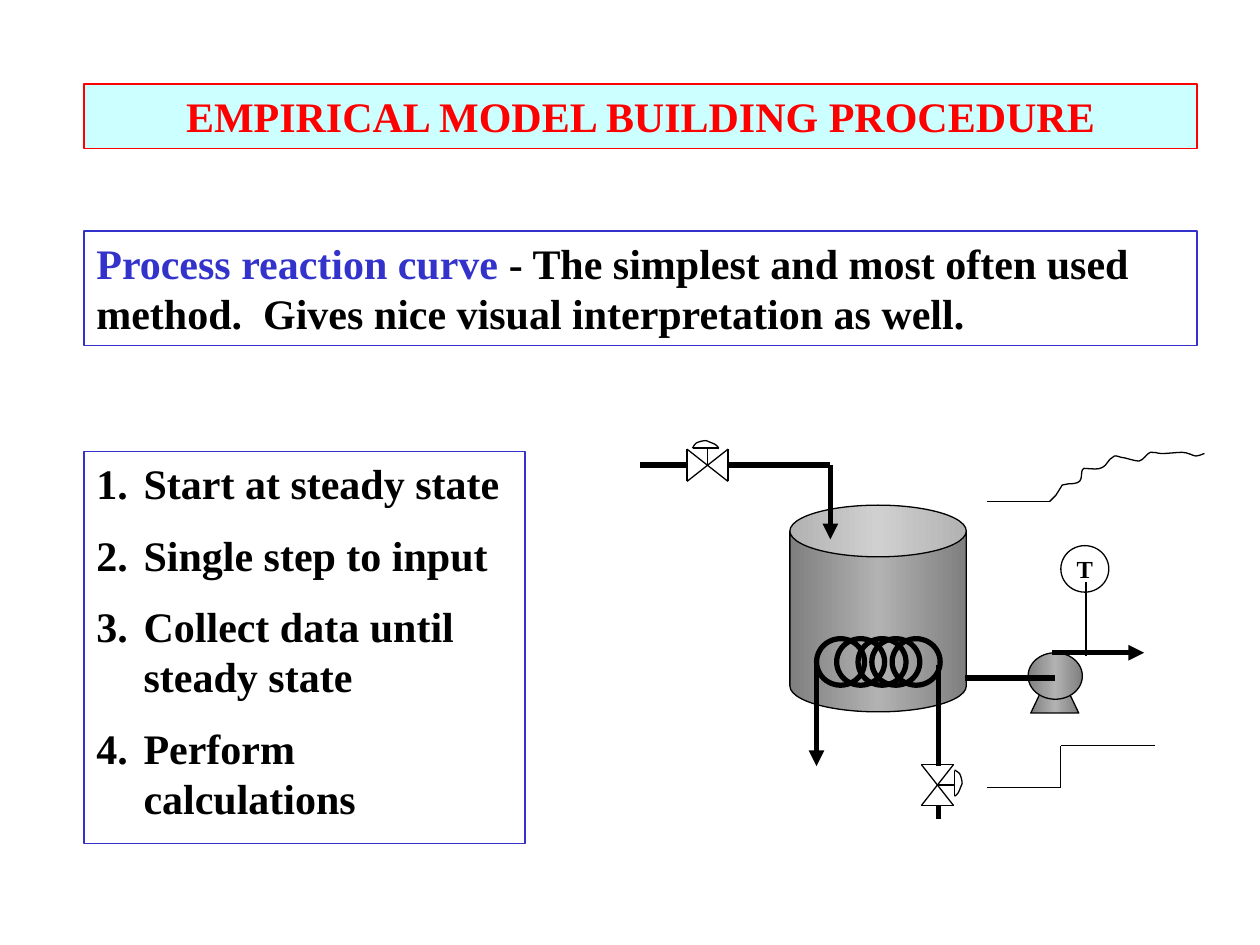
import copy

import pptx
import pptx.dml.color
import pptx.enum.shapes
import pptx.enum.text
import pptx.oxml
import pptx.oxml.ns
import pptx.util

Pt = pptx.util.Pt
SHAPES = pptx.enum.shapes.MSO_SHAPE
ALIGN = pptx.enum.text.PP_ALIGN
FONT = "Times New Roman"
BLACK, RED, BLUE, CYAN = "000000", "FF0000", "3333CC", "CCFFFF"
METAL = [(0, "7F7F7F"), (50, "B2B2B2"), (100, "7F7F7F")]
THIN, THICK = 0.75, 3

STEPS = ["Start at steady state", "Single step to input",
         "Collect data until steady state", "Perform calculations"]

# Curves: a start point, then two control points and an end point per segment
VALVE_CAP = [(6.4, 0), (5.8, 0.7), (5.8, 1.4), (4.3, 2.2), (2.9, 2.9), (0.7, 3.6), (-0.7, 4.3),
             (-2.9, 4.3), (-5, 3.6), (-6.5, 2.9), (-7.2, 2.2), (-7.9, 1.4), (-8.6, 0)]
RESPONSE = [(239.8, 34.6), (241.2, 33.1), (241.9, 32.4), (243.4, 31),
            (244.8, 28.8), (246.2, 26.6), (247, 25.2), (248.4, 24.5), (249.1, 25.2), (250.6, 24.5),
            (252, 24.5), (255.6, 24.5), (257, 23), (258.5, 21.6), (257.8, 17.3), (258.5, 16.6),
            (259.2, 15.1), (259.2, 15.8), (261.4, 15.8), (263.5, 15.8), (267.8, 16.6), (270, 15.1),
            (272.2, 14.4), (273.6, 10.1), (275.8, 9.4), (277.2, 7.9), (277.9, 8.6), (280.8, 9.4),
            (283, 9.4), (288, 11.5), (290.9, 11.5), (293.8, 10.8), (295.2, 7.2), (297.4, 6.5),
            (299.5, 5.8), (301, 7.2), (303.8, 7.2), (307.4, 7.2), (312.5, 6.5), (315.4, 6.5),
            (319, 6.5), (321.8, 8.6), (323.3, 8.6), (325.4, 8.6), (327.6, 7.2), (328.3, 7.2)]


def color(value):
    return pptx.dml.color.RGBColor.from_string(value)


def style(shape, fill=None, line=BLACK, width=THIN):
    """Fill with nothing, one colour, or a list of gradient stops."""
    shape.shadow.inherit = False
    shape.line.color.rgb = color(line)
    shape.line.width = Pt(width)
    if fill is None:
        shape.fill.background()
    elif isinstance(fill, str):
        shape.fill.solid()
        shape.fill.fore_color.rgb = color(fill)
    else:
        shape.fill.gradient()
        shape.fill.gradient_angle = 0
        stops = shape.element.spPr.find(".//" + pptx.oxml.ns.qn("a:gsLst"))
        stops.append(copy.deepcopy(stops[0]))
        for stop, (position, value) in zip(shape.fill.gradient_stops, fill):
            stop.position = position / 100
            stop.color.rgb = color(value)


def add_shape(shapes, kind, box, **look):
    shape = shapes.add_shape(kind, *map(Pt, box))
    style(shape, **look)
    return shape


def add_line(shapes, start, end, width=THIN, arrow=False):
    line = shapes.add_connector(pptx.enum.shapes.MSO_CONNECTOR.STRAIGHT,
                                *map(Pt, (*start, *end)))
    line.line.color.rgb = color(BLACK)
    line.line.width = Pt(width)
    if arrow:
        pptx.oxml.ns.qn("a:tailEnd")
        head = line.line._get_or_add_ln().makeelement(
            pptx.oxml.ns.qn("a:tailEnd"), {"type": "triangle"})
        line.line._get_or_add_ln().append(head)
    properties = line.element.spPr
    properties.append(properties.makeelement(pptx.oxml.ns.qn("a:effectLst"), {}))


def add_curve(shapes, points):
    """Draw the points as a polyline, then join each three into a cubic segment."""
    start, *rest = [tuple(map(Pt, point)) for point in points]
    builder = shapes.build_freeform(*start)
    builder.add_line_segments(rest, close=False)
    shape = builder.convert_to_shape()
    style(shape)
    outline = shape.element.spPr.find(".//" + pptx.oxml.ns.qn("a:path"))
    segments = outline.findall(pptx.oxml.ns.qn("a:lnTo"))
    for first in range(0, len(segments), 3):
        cubic = outline.makeelement(pptx.oxml.ns.qn("a:cubicBezTo"), {})
        outline.append(cubic)
        for segment in segments[first:first + 3]:
            cubic.append(segment[0])
            outline.remove(segment)


def add_run(paragraph, text, value=BLACK, size=24):
    run = paragraph.add_run()
    run.text = text
    run.font.color.rgb = color(value)
    for name, setting in {"name": FONT, "size": Pt(size), "bold": True}.items():
        setattr(run.font, name, setting)


def text_panel(slide, box, paragraphs, align=ALIGN.LEFT, hanging=0, **look):
    """A bordered box; each paragraph is a list of (text, colour) runs."""
    panel = add_shape(slide.shapes, SHAPES.RECTANGLE, box, **look)
    frame = panel.text_frame
    frame.word_wrap = True
    frame.vertical_anchor = pptx.enum.text.MSO_ANCHOR.TOP
    for number, runs in enumerate(paragraphs):
        paragraph = frame.add_paragraph() if number else frame.paragraphs[0]
        for name, setting in {"alignment": align, "space_before": Pt(12)}.items():
            setattr(paragraph, name, setting)
        if hanging:
            properties = paragraph._p.get_or_add_pPr()
            properties.set("marL", str(Pt(hanging)))
            properties.set("indent", str(-Pt(hanging)))
        for text, value in runs:
            add_run(paragraph, text, value)


def valve(slide, center, horizontal):
    """Bow-tie control valve; points are (along the flow, out to the actuator)."""
    shapes = slide.shapes.add_group_shape().shapes
    x, y = center

    def place(along, out):
        return (x + along, y - out) if horizontal else (x + out, y + along)

    length, width, stem = 11.7, 9.2, 9.8
    for start, end in [((-length, -width), (-length, width)), ((length, -width), (length, width)),
                       ((-length, -width), (length, width)), ((-length, width), (length, -width)),
                       ((0, 0), (0, stem)), ((-8, stem), (6.4, stem))]:
        add_line(shapes, place(*start), place(*end))
    add_curve(shapes, [place(along, stem + out) for along, out in VALVE_CAP])


def process_diagram(slide, left, top):
    shapes = slide.shapes

    def at(x, y):
        return left + x, top + y

    def pipe(start, end, **options):
        add_line(shapes, at(*start), at(*end), **options)

    # Tank and pump base
    tank = add_shape(shapes, SHAPES.CAN, (*at(91.4, 36.7), 100.8, 118.1), fill=METAL)
    tank.adjustments[0] = 0.293
    base = add_shape(shapes, SHAPES.FLOWCHART_MANUAL_OPERATION,
                     (*at(229, 144), 27.4, 11.5), fill=METAL)
    base.element.spPr.xfrm.set("flipV", "1")

    # Coil and its two legs
    for x in (118.1, 106.6, 130.3, 138.2, 149.8):
        add_shape(shapes, SHAPES.FLOWCHART_CONNECTOR, (*at(x, 113), 27.4, 26.6), width=THICK)
    pipe((106.6, 128.2), (106.6, 185.8), width=THICK, arrow=True)
    pipe((176.4, 128.2), (176.4, 185.8), width=THICK)

    # Coil and feed valves
    valve(slide, at(175.7, 196.6), horizontal=False)
    valve(slide, at(44.3, 13.9), horizontal=True)

    # Pump and pipes
    add_shape(shapes, SHAPES.OVAL, (*at(227.5, 121), 31, 26.6), fill=METAL)
    pipe((242.6, 135.4), (191.5, 135.4), width=THICK)
    pipe((241.2, 121), (293.8, 121), width=THICK, arrow=True)
    pipe((176.4, 208.1), (176.4, 216), width=THICK)
    pipe((114.5, 13.7), (114.5, 56.2), width=THICK, arrow=True)
    pipe((114.5, 13.7), (56.2, 13.7), width=THICK)
    pipe((33.1, 13.7), (5.8, 13.7), width=THICK)

    # Temperature sensor
    sensor = add_shape(shapes, SHAPES.OVAL, (*at(246.2, 59.8), 27.4, 26.6))
    sensor.text_frame.word_wrap = False
    sensor.text_frame.vertical_anchor = pptx.enum.text.MSO_ANCHOR.MIDDLE
    sensor.text_frame.paragraphs[0].alignment = ALIGN.CENTER
    add_run(sensor.text_frame.paragraphs[0], "T", size=14)
    pipe((260.6, 123.1), (260.6, 80.6))

    # Input step
    corners = [(203.8, 198), (246.2, 198), (246.2, 174.2), (300.2, 174.2)]
    for start, end in zip(corners, corners[1:]):
        pipe(start, end)

    # Output response
    response = shapes.add_group_shape().shapes
    add_line(response, at(203.8, 34.6), at(*RESPONSE[0]))
    add_curve(response, [at(*point) for point in RESPONSE])


def main():
    presentation = pptx.Presentation()
    presentation.slide_width, presentation.slide_height = Pt(720), Pt(540)
    slide = presentation.slides.add_slide(presentation.slide_layouts[6])

    text_panel(slide, (48, 48, 636, 36.7), [[("EMPIRICAL MODEL BUILDING PROCEDURE", RED)]],
               align=ALIGN.CENTER, fill=CYAN, line=RED)
    text_panel(slide, (48, 132, 636, 65.5),
               [[("Process reaction curve", BLUE),
                 (" - The simplest and most often used method.  "
                  "Gives nice visual interpretation as well.", BLACK)]], line=BLUE)
    text_panel(slide, (48, 258, 252, 223.9),
               [[(f"{number}.\t{step}", BLACK)] for number, step in enumerate(STEPS, 1)],
               hanging=27, line=BLUE)
    process_diagram(slide, 360, 252)
    presentation.save("out.pptx")


if __name__ == "__main__":
    main()
